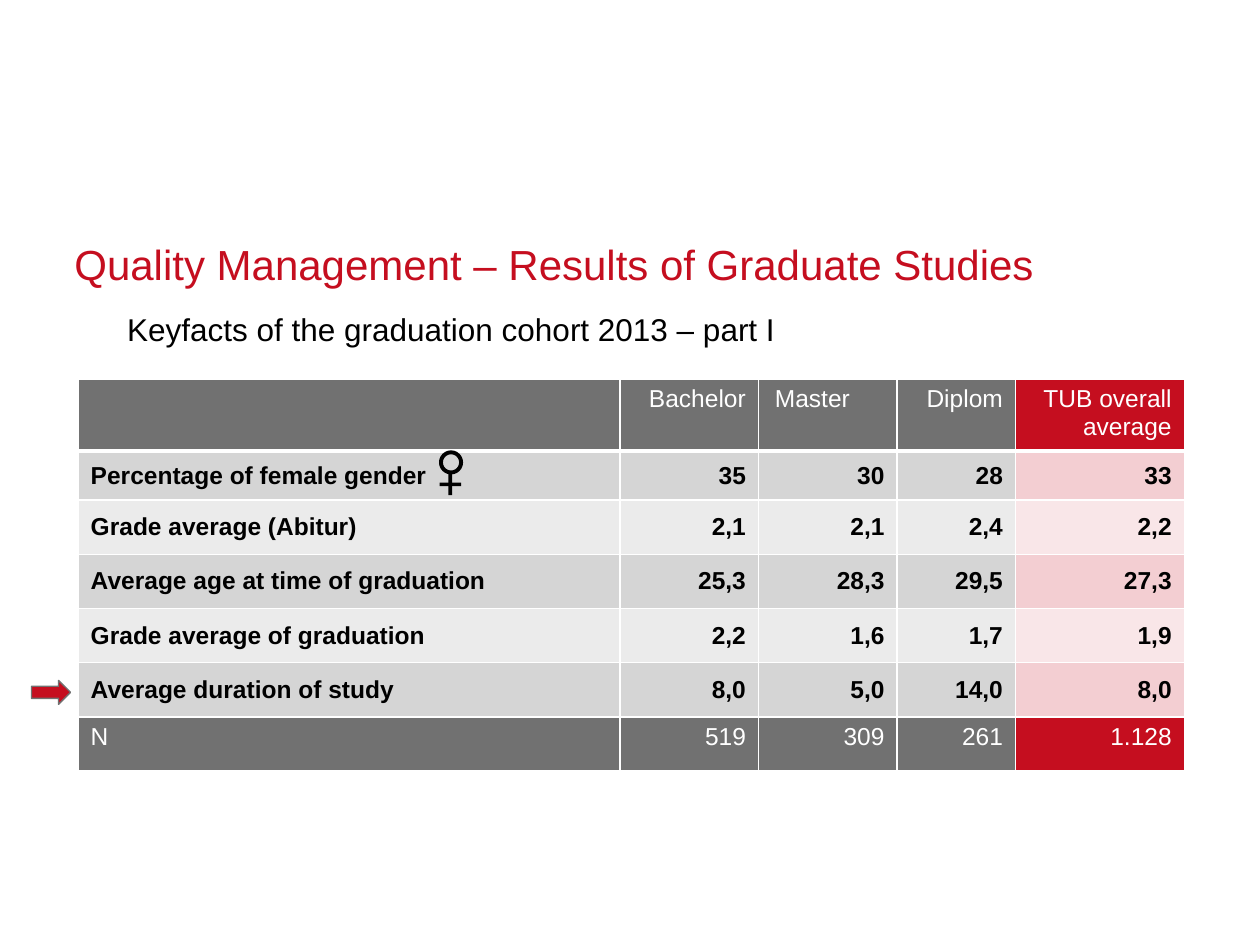
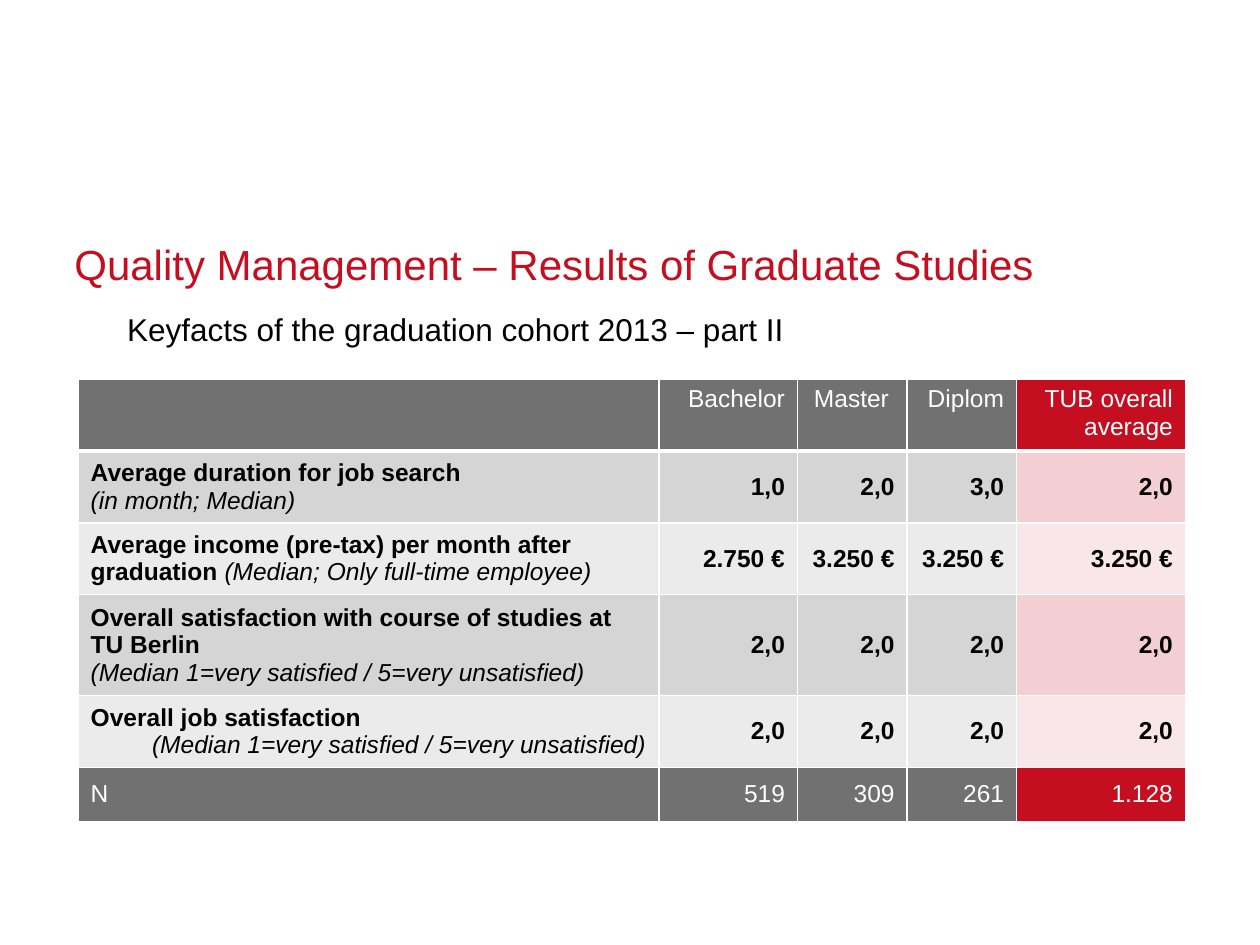
from dataclasses import dataclass

from lxml import etree
from pptx import Presentation
from pptx.dml.color import RGBColor
from pptx.enum.shapes import MSO_SHAPE
from pptx.enum.text import MSO_ANCHOR, PP_ALIGN
from pptx.oxml.ns import qn
from pptx.util import Inches, Pt

LEFT, RIGHT = PP_ALIGN.LEFT, PP_ALIGN.RIGHT
TOP, MIDDLE, BOTTOM = MSO_ANCHOR.TOP, MSO_ANCHOR.MIDDLE, MSO_ANCHOR.BOTTOM
OVAL, RECT, ARROW = MSO_SHAPE.OVAL, MSO_SHAPE.RECTANGLE, MSO_SHAPE.RIGHT_ARROW


@dataclass(frozen=True)
class Theme:
    font: str = "Arial"
    red: str = "C50E1F"
    gray: str = "717171"
    bands: tuple = ("D5D5D5", "EBEBEB")
    red_opacity: tuple = (20, 10)
    black: str = "000000"
    white: str = "FFFFFF"
    title_size: int = 24
    subtitle_size: int = 18
    table_size: int = 14


THEME = Theme()

# Content: a label is a list of paragraphs, each (alignment, bold part, italic part)
TITLE = "Quality Management – Results of Graduate Studies"
HEADER = ["Bachelor", "Master", "Diplom", "TUB overall average"]
TOTALS = ["519", "309", "261", "1.128"]
SCALE = "(Median 1=very satisfied / 5=very unsatisfied)"

COHORT = {
    "subtitle": "Keyfacts of the graduation cohort 2013 – part I",
    "columns": [4.3, 1.1, 1.1, 0.94, 1.34],
    "heights": [0.57, 0.39, 0.43, 0.43, 0.43, 0.43, 0.43],
    "total_anchor": TOP,
    "facts": [
        ([(LEFT, "Percentage of female gender", "")], ["35", "30", "28", "33"]),
        ([(LEFT, "Grade average (Abitur)", "")], ["2,1", "2,1", "2,4", "2,2"]),
        ([(LEFT, "Average age at time of graduation", "")],
         ["25,3", "28,3", "29,5", "27,3"]),
        ([(LEFT, "Grade average of graduation", "")], ["2,2", "1,6", "1,7", "1,9"]),
        ([(LEFT, "Average duration of study", "")], ["8,0", "5,0", "14,0", "8,0"]),
    ],
}
CAREER = {
    "subtitle": "Keyfacts of the graduation cohort 2013 – part II",
    "columns": [4.61, 1.1, 0.87, 0.87, 1.34],
    "heights": [0.57, 0.57, 0.57, 0.8, 0.57, 0.43],
    "total_anchor": MIDDLE,
    "facts": [
        ([(LEFT, "Average duration for job search", ""),
          (LEFT, "", "(in month; Median)")], ["1,0", "2,0", "3,0", "2,0"]),
        ([(LEFT, "Average income (pre-tax) per month after graduation ",
           "(Median; Only full-time employee)")],
         ["2.750 €", "3.250 €", "3.250 €", "3.250 €"]),
        ([(LEFT, "Overall satisfaction with course of studies at TU Berlin", ""),
          (LEFT, "", SCALE)], ["2,0"] * 4),
        ([(LEFT, "Overall job satisfaction", ""), (RIGHT, "", SCALE)], ["2,0"] * 4),
    ],
}


def rgb(color):
    return RGBColor.from_string(color)


def style(font, size, color, bold=False, italic=False):
    font.name, font.size = THEME.font, Pt(size)
    font.bold, font.italic = bold, italic
    font.color.rgb = rgb(color)


def add_line(slide, text, box, size, color, left_inset=0.0, inset=0.0):
    frame = slide.shapes.add_textbox(*map(Inches, box)).text_frame
    frame.word_wrap = True
    frame.margin_left = Inches(left_inset)
    frame.margin_right = frame.margin_top = frame.margin_bottom = Inches(inset)
    frame.text = text
    style(frame.paragraphs[0].runs[0].font, size, color)
    return frame


def add_solid(shapes, kind, box, fill=None, line=None, width=0.75):
    shape = shapes.add_shape(kind, *map(Inches, box))
    shape.shadow.inherit = False
    if fill:
        shape.fill.solid()
        shape.fill.fore_color.rgb = rgb(fill)
    else:
        shape.fill.background()
    if line:
        shape.line.color.rgb = rgb(line)
        shape.line.width = Pt(width)
    else:
        shape.line.fill.background()


def paint_cell(cell, fill, opacity=100, bottom=1):
    properties = cell._tc.get_or_add_tcPr()
    for side, points in (("L", 1), ("R", 1), ("T", 1), ("B", bottom)):
        border = etree.SubElement(properties, qn("a:ln" + side), w=str(Pt(points)))
        solid = etree.SubElement(border, qn("a:solidFill"))
        etree.SubElement(solid, qn("a:srgbClr"), val=THEME.white)
    cell.fill.solid()
    cell.fill.fore_color.rgb = rgb(fill)
    if opacity < 100:
        color = properties.find(qn("a:solidFill")).find(qn("a:srgbClr"))
        etree.SubElement(color, qn("a:alpha"), val=str(opacity * 1000))


def write_cell(cell, paragraphs, color, bold, anchor):
    cell.vertical_anchor = anchor
    frame = cell.text_frame
    for index, (alignment, main, note) in enumerate(paragraphs):
        paragraph = frame.add_paragraph() if index else frame.paragraphs[0]
        paragraph.alignment = alignment
        for text, italic in ((main, False), (note, True)):
            if text:
                run = paragraph.add_run()
                run.text = text
                style(run.font, THEME.table_size, color, bold and not italic, italic)


def add_keyfacts(slide, part):
    rows = [([], HEADER), *part["facts"], ([(LEFT, "N", "")], TOTALS)]
    columns, heights = part["columns"], part["heights"]
    table = slide.shapes.add_table(
        len(rows), len(columns), Inches(0.62), Inches(3.01),
        Inches(sum(columns)), Inches(sum(heights))).table
    table.first_row = table.horz_banding = False
    for column, width in zip(table.columns, columns):
        column.width = Inches(width)
    for row, height in zip(table.rows, heights):
        row.height = Inches(height)

    last_row, last_column = len(rows) - 1, len(columns) - 1
    for r, (label, values) in enumerate(rows):
        is_fact = 0 < r < last_row
        band = (r - 1) % 2
        anchor = MIDDLE if is_fact else part["total_anchor"] if r else TOP
        texts = [label] + [[(RIGHT, value, "")] for value in values]
        for c, paragraphs in enumerate(texts):
            cell = table.cell(r, c)
            fill = THEME.bands[band] if is_fact else THEME.gray
            opacity = 100
            if c == last_column:
                fill = THEME.red
                opacity = THEME.red_opacity[band] if is_fact else 100
            paint_cell(cell, fill, opacity, bottom=1 if r else 3)
            write_cell(cell, paragraphs, THEME.black if is_fact else THEME.white,
                       is_fact, anchor)

    # The Master heading stands at the left of its column
    master = table.cell(0, 2)
    master.margin_left = Inches(0.13)
    master.text_frame.paragraphs[0].alignment = LEFT


def add_part(deck, part):
    slide = deck.slides.add_slide(deck.slide_layouts[6])
    title = add_line(slide, TITLE, (0.59, 1.87, 8.82, 0.42),
                     THEME.title_size, THEME.red)
    title.vertical_anchor = BOTTOM
    title.paragraphs[0].line_spacing = Pt(30)
    add_line(slide, part["subtitle"], (0.84, 2.41, 7.8, 0.4),
             THEME.subtitle_size, THEME.black, left_inset=0.17, inset=0.05)
    add_keyfacts(slide, part)
    return slide


def add_female_sign(slide):
    sign = slide.shapes.add_group_shape().shapes
    add_solid(sign, OVAL, (3.5, 3.59, 0.16, 0.16), line=THEME.black, width=2.25)
    add_solid(sign, RECT, (3.56, 3.76, 0.03, 0.17), fill=THEME.black)
    add_solid(sign, RECT, (3.49, 3.83, 0.17, 0.03), fill=THEME.black)


def main():
    deck = Presentation()
    deck.slide_width, deck.slide_height = Inches(10), Inches(7.5)

    # Part I, with the study duration row pointed out
    cohort = add_part(deck, COHORT)
    add_female_sign(cohort)
    add_solid(cohort.shapes, ARROW, (0.25, 5.4, 0.31, 0.19),
              fill=THEME.red, line=THEME.gray)

    # Part II
    add_part(deck, CAREER)
    deck.save("out.pptx")


if __name__ == "__main__":
    main()
